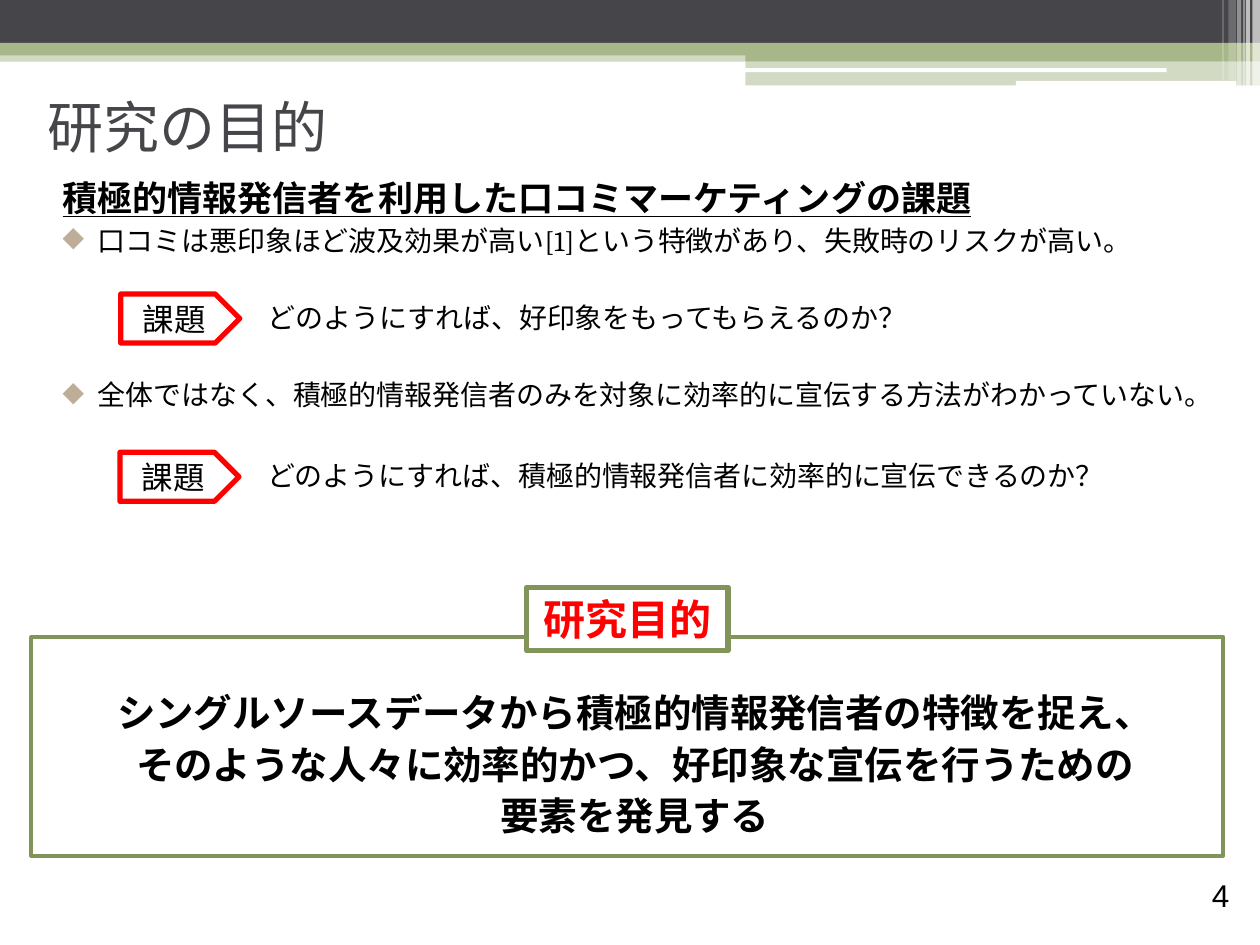
import pptx
import pptx.dml.color
import pptx.enum.shapes
import pptx.enum.text
import pptx.oxml.ns
import pptx.util
from dataclasses import dataclass
from lxml import etree

Pt = pptx.util.Pt
Kind = pptx.enum.shapes.MSO_SHAPE
Align = pptx.enum.text.PP_ALIGN
Mid = pptx.enum.text.MSO_ANCHOR.MIDDLE
qn = pptx.oxml.ns.qn

HUES = {
    "dark": "46464A",
    "sage": "A7B789",
    "moss": "81955B",
    "sand": "BEAE98",
    "white": "FFFFFF",
    "black": "000000",
    "red": "FF0000",
}


@dataclass
class Bar:
    left: float
    top: float
    width: float
    height: float
    hue: str
    alpha: int = 100
    kind: int = Kind.RECTANGLE


@dataclass
class Task:
    left: float
    top: float
    width: float
    text: str


ROUND = Kind.ROUNDED_RECTANGLE
BARS = [
    Bar(0, 28.8, 720, 6.5, "sage", 50),
    Bar(0, 0, 720, 24.5, "dark"),
    Bar(0, 24.5, 720, 7.2, "sage"),
    Bar(426, 28, 294, 7, "sage"),
    Bar(426, 34.6, 294, 14.2, "sage", 50),
    Bar(425.5, 39, 241.2, 2.2, "white", kind=ROUND),
    Bar(580.5, 46.2, 126, 2.9, "white", kind=ROUND),
    Bar(715.6, 0, 4.4, 49, "white", 65),
    Bar(712, 0, 2.2, 49, "white", 65),
    Bar(710.5, 0, 0.75, 49, "white", 60),
    Bar(707, 0, 2.2, 49, "white", 40),
    Bar(702, 0, 4.3, 46, "white", 20),
    Bar(698.5, 0, 0.75, 46, "white", 30),
]

TASKS = [
    Task(69, 168, 485, "どのようにすれば、好印象をもってもらえるのか？"),
    Task(68.5, 258.5, 503, "どのようにすれば、積極的情報発信者に効率的に宣伝できるのか？"),
]

POINTS = [
    ("口コミは悪印象ほど波及効果が高い[1]という特徴があり、失敗時のリスクが高い。", 3),
    ("全体ではなく、積極的情報発信者のみを対象に効率的に宣伝する方法がわかっていない。", 69),
]

GOAL = [
    "シングルソースデータから積極的情報発信者の特徴を捉え、",
    "そのような人々に効率的かつ、好印象な宣伝を行うための",
    "要素を発見する",
]


def tint(name: str):
    return pptx.dml.color.RGBColor.from_string(HUES[name])


def write(frame, text, first=True, size=16, font="Cambria", hue="black",
          bold=False, under=False, align=Align.LEFT, before=0,
          left=0, hang=0, mark=None):
    frame.word_wrap = True
    para = frame.paragraphs[0] if first else frame.add_paragraph()
    para.alignment = align
    para.space_before = Pt(before)
    props = para._p.get_or_add_pPr()
    props.set("marL", str(Pt(left)))
    props.set("indent", str(Pt(hang)))
    if mark:
        shade = etree.SubElement(props, qn("a:buClr"))
        etree.SubElement(shade, qn("a:srgbClr"), val=HUES["sand"])
        etree.SubElement(props, qn("a:buChar"), char=mark)
    run = para.add_run()
    run.text = text
    run.font.size = Pt(size)
    run.font.name = font
    run.font.bold = bold
    run.font.underline = under
    run.font.color.rgb = tint(hue)


def place(item, left: float, top: float, width: float, height: float):
    item.left, item.top = Pt(left), Pt(top)
    item.width, item.height = Pt(width), Pt(height)


def text_box(slide, left: float, top: float, width: float, height: float):
    return slide.shapes.add_textbox(Pt(left), Pt(top), Pt(width), Pt(height)).text_frame


def draw_bar(slide, bar: Bar, edge: str = "", weight: float = 0):
    shape = slide.shapes.add_shape(
        bar.kind, Pt(bar.left), Pt(bar.top), Pt(bar.width), Pt(bar.height))
    shape.shadow.inherit = False
    if bar.hue:
        shape.fill.solid()
        shape.fill.fore_color.rgb = tint(bar.hue)
    else:
        shape.fill.background()
    if bar.alpha < 100:
        shade = shape._element.spPr.find(".//" + qn("a:srgbClr"))
        etree.SubElement(shade, qn("a:alpha"), val=str(bar.alpha * 1000))
    if edge:
        shape.line.color.rgb = tint(edge)
        shape.line.width = Pt(weight)
    else:
        shape.line.fill.background()
    return shape


def draw_task(slide, task: Task):
    tag = draw_bar(slide, Bar(task.left, task.top, 68, 28, "white",
                              kind=Kind.PENTAGON), "red", 3)
    tag.text_frame.vertical_anchor = Mid
    write(tag.text_frame, "課題", size=18, align=Align.CENTER)
    write(text_box(slide, task.left + 77, task.top, task.width, 26.6), task.text)


def main():
    deck = pptx.Presentation()
    deck.slide_width, deck.slide_height = Pt(720), Pt(540)
    slide = deck.slides.add_slide(deck.slide_layouts[5])

    for bar in BARS:
        draw_bar(slide, bar)

    title = slide.shapes.title
    place(title, 20, 43.5, 648, 57)
    title.text_frame.vertical_anchor = Mid
    write(title.text_frame, "研究の目的", size=32, font="Cabin", hue="dark")

    body = text_box(slide, 20, 97.2, 680.5, 229)
    write(body, "積極的情報発信者を利用した口コミマーケティングの課題",
          size=20, bold=True, under=True, before=3, left=8.64)
    for text, gap in POINTS:
        write(body, text, first=False, before=gap, left=28.8, hang=-20.16, mark="◆")

    goal = draw_bar(slide, Bar(18, 364, 681, 125, ""), "moss", 2.25).text_frame
    goal.vertical_anchor = pptx.enum.text.MSO_ANCHOR.TOP
    goal.margin_top = Pt(30)
    for row, text in enumerate(GOAL):
        write(goal, text, first=row == 0, size=22, bold=True,
              align=Align.CENTER, before=3, left=8.64)

    for task in TASKS:
        draw_task(slide, task)

    label = draw_bar(slide, Bar(301, 335.5, 115, 36.3, "white"), "moss", 3)
    label.text_frame.vertical_anchor = Mid
    write(label.text_frame, "研究目的", size=24, hue="red", bold=True,
          align=Align.CENTER)

    page = text_box(slide, 649.5, 497, 60, 28.8)
    page.vertical_anchor = pptx.enum.text.MSO_ANCHOR.BOTTOM
    write(page, "4", size=18, font="Arial", align=Align.RIGHT)

    deck.save("out.pptx")


if __name__ == "__main__":
    main()
